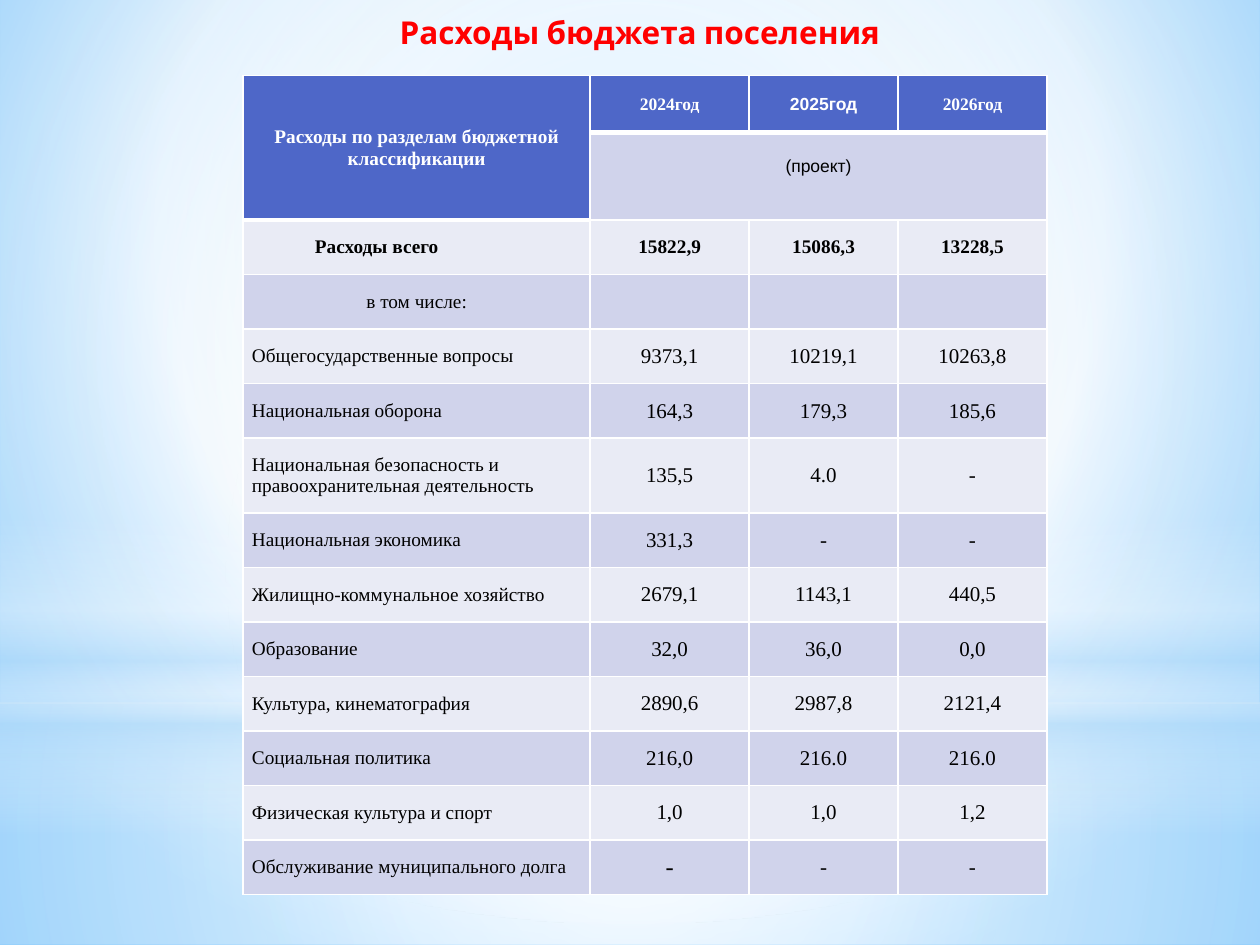
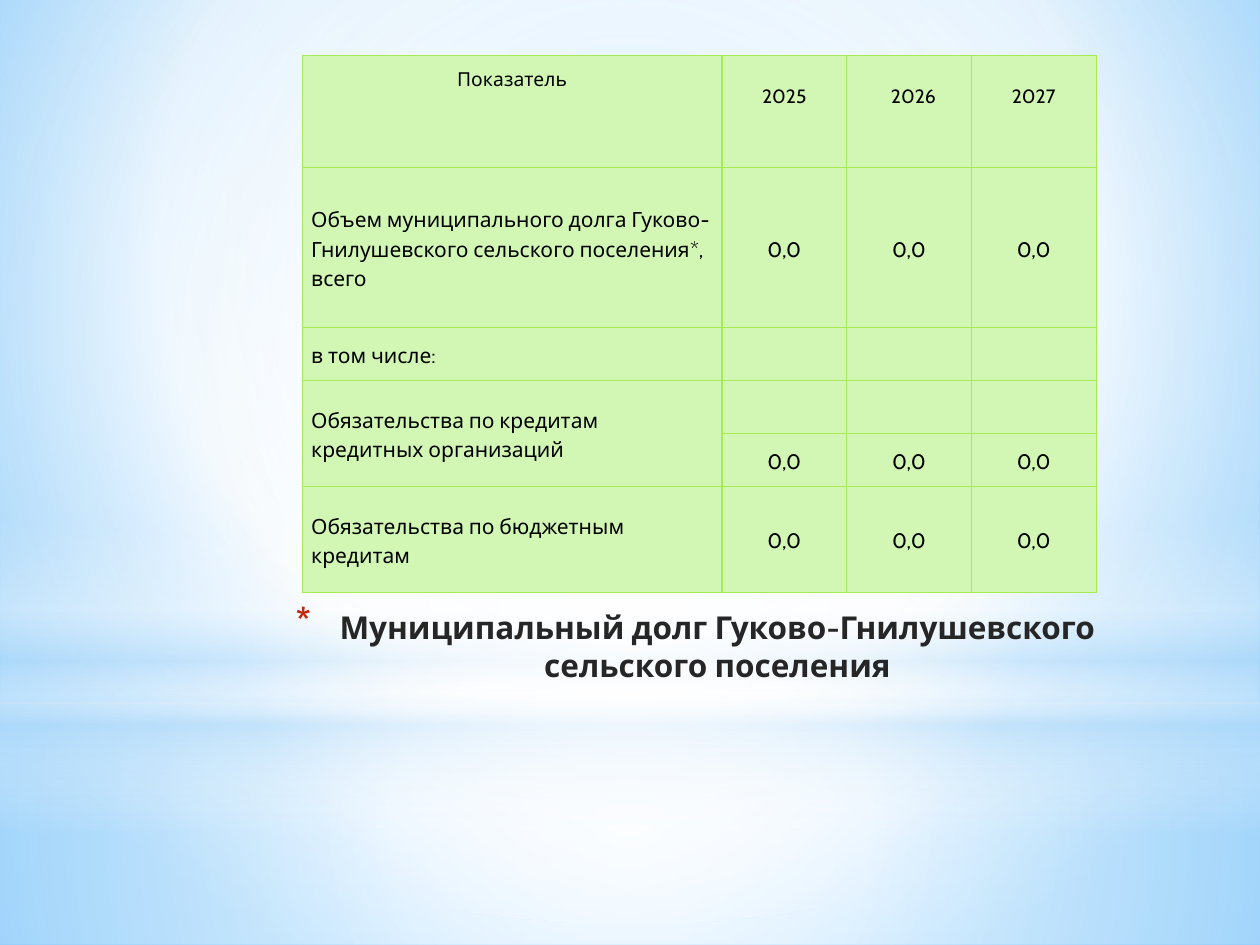
import pptx
import pptx.util
import pptx.dml.color
import pptx.enum.shapes
import pptx.enum.text
import pptx.oxml
import pptx.oxml.ns

Pt, Inches = pptx.util.Pt, pptx.util.Inches
RGB = pptx.dml.color.RGBColor
Align, Anchor = pptx.enum.text.PP_ALIGN, pptx.enum.text.MSO_ANCHOR
Kind = pptx.enum.shapes.MSO_SHAPE
qn = pptx.oxml.ns.qn

WHITE, BLACK = RGB(255, 255, 255), RGB(0, 0, 0)
RED, RUST, DARK = RGB(255, 0, 0), RGB(0xC3, 0x26, 0x0C), RGB(0x26, 0x26, 0x26)
BLUE, MID, PALE = RGB(0x4E, 0x67, 0xC8), RGB(0xD0, 0xD3, 0xEB), RGB(0xE9, 0xEB, 0xF5)
LIME, MINT = RGB(0xA7, 0xEA, 0x52), RGB(0xD2, 0xF7, 0xB5)
SKY, DEEP, MIST = RGB(0x9E, 0xD5, 0xFF), RGB(0x5B, 0xB9, 0xFF), RGB(0xB4, 0xDC, 0xFA)
SERIF, SANS, CABIN = "Times New Roman", "Arial", "Cabin"

WIDE, HIGH = Inches(10), Inches(7.5)
COL, ROW = WIDE / 100, HIGH / 100  # the slide is a grid of 100 by 100
SIDE = Inches(0.07)
MIDDLE = (50, 50, 50, 50)

COSTS = [
    ("Расходы всего", "15822,9", "15086,3", "13228,5"),
    ("в том числе:", "", "", ""),
    ("Общегосударственные вопросы", "9373,1", "10219,1", "10263,8"),
    ("Национальная оборона", "164,3", "179,3", "185,6"),
    ("Национальная безопасность и правоохранительная деятельность", "135,5", "4.0", "-"),
    ("Национальная экономика", "331,3", "-", "-"),
    ("Жилищно-коммунальное хозяйство", "2679,1", "1143,1", "440,5"),
    ("Образование", "32,0", "36,0", "0,0"),
    ("Культура, кинематография", "2890,6", "2987,8", "2121,4"),
    ("Социальная политика", "216,0", "216.0", "216.0"),
    ("Физическая культура и спорт", "1,0", "1,0", "1,2"),
    ("Обслуживание муниципального долга", "-", "-", "-"),
]
ZEROS, GAPS = ("0,0",) * 3, ("",) * 3
DEBTS = [
    ("Показатель", "2025", "2026", "2027"),
    ("Объем муниципального долга Гуково-Гнилушевского сельского поселения*, всего", *ZEROS),
    ("в том числе:", *GAPS),
    ("Обязательства по кредитам кредитных организаций", *GAPS),
    ("", *ZEROS),
    ("Обязательства по бюджетным кредитам", *ZEROS),
]


def place(box):
    left, top, width, height = box
    return int(left * COL), int(top * ROW), int(width * COL), int(height * ROW)


def node(tag, parent, **attrs):
    child = parent.makeelement(qn(tag), {k: str(v) for k, v in attrs.items()})
    parent.append(child)
    return child


def blend(owner, fill, stops, focus=None):
    """Fill with (place, colour, opacity) stops, round a focus or downwards."""
    fill.gradient()
    grad = owner.element.find(".//" + qn("a:gradFill"))
    for child in list(grad):
        grad.remove(child)
    group = node("a:gsLst", grad)
    for pos, color, alpha in stops:
        stop = node("a:gs", group, pos=pos * 1000)
        tint = node("a:srgbClr", stop, val=color)
        if alpha < 100:
            node("a:alpha", tint, val=alpha * 1000)
    if focus:
        way = node("a:path", grad, path="circle")
        node("a:fillToRect", way, **{k: v * 1000 for k, v in zip("ltrb", focus)})
    else:
        node("a:lin", grad, ang=90 * 60000, scaled=0)


def glow(slide, kind, box, stops, focus=MIDDLE):
    shape = slide.shapes.add_shape(kind, *place(box))
    shape.shadow.inherit = False
    shape.line.fill.background()
    blend(shape, shape.fill, stops, focus)


def scene(slide):
    """Draw the soft light behind every slide."""
    rect = Kind.RECTANGLE
    glow(slide, rect, (0, 74.4, 100, 25.6),
         [(0, WHITE, 91), (37, WHITE, 76), (100, MIST, 79)])
    glow(slide, rect, (0, 0, 100, 74.4),
         [(0, WHITE, 89), (48, WHITE, 62), (100, MIST, 79)])
    glow(slide, rect, (0, 54.9, 100, 33.3),
         [(0, WHITE, 0), (29, WHITE, 30), (45, MIST, 40),
          (55, WHITE, 26), (65, MIST, 60), (100, WHITE, 0)], None)
    glow(slide, Kind.OVAL, (0, 23.3, 100, 74.4), [(0, WHITE, 100), (56, WHITE, 0)])


def style(para, size, font, color, bold=False, align=Align.CENTER):
    para.alignment = align
    for face in [run.font for run in para.runs] or [para.font]:
        face.size, face.name, face.bold = Pt(size), font, bold
        face.color.rgb = color


def title(slide, box, text, color):
    frame = slide.shapes.add_textbox(*place(box)).text_frame
    frame.word_wrap = True
    para = frame.paragraphs[0]
    para.text = text
    style(para, 18, CABIN, color, True)
    return para


def star(para):
    """Give a paragraph the hanging asterisk."""
    props = para._p.get_or_add_pPr()
    props.set("marL", str(Inches(0.35)))
    props.set("indent", str(-Inches(0.35)))
    node("a:srgbClr", node("a:buClr", props), val=RUST)
    node("a:buSzPct", props, val=128000)
    node("a:buChar", props, char="*")


def indent(para, inches):
    para._p.get_or_add_pPr().set("indent", str(Inches(inches)))


def edge(cell, color, width, top=None, bottom=None):
    props = cell._tc.get_or_add_tcPr()
    sizes = {"L": width, "R": width, "T": top or width, "B": bottom or width}
    for i, (name, size) in enumerate(sizes.items()):
        line = node("a:ln" + name, props, w=Pt(size))
        node("a:srgbClr", node("a:solidFill", line), val=color)
        props.insert(i, line)


def grid(slide, box, cols, rows):
    """Add a plain table whose columns and rows share the box."""
    area = place(box)
    table = slide.shapes.add_table(len(rows), len(cols), *area).table
    table.first_row = table.horz_banding = False
    for col, part in zip(table.columns, cols):
        col.width = int(area[2] * part / sum(cols))
    for row, part in zip(table.rows, rows):
        row.height = int(area[3] * part / sum(rows))
    return table


def write(cell, text, fill):
    cell.fill.solid()
    cell.fill.fore_color.rgb = fill
    cell.margin_left = cell.margin_right = SIDE
    cell.margin_top = cell.margin_bottom = 0
    cell.vertical_anchor = Anchor.MIDDLE
    para = cell.text_frame.paragraphs[0]
    para.text = text
    return para


def costs(slide, box):
    heads = [("Расходы по разделам бюджетной классификации", "2024год", "2025год", "2026год"),
             ("", "(проект)", "", "")]
    rows = [45, 69] + [59 if len(line[0]) > 40 else 43 for line in COSTS]
    table = grid(slide, box, [275, 126, 118, 118], rows)
    for r, line in enumerate(heads + COSTS):
        for c, text in enumerate(line):
            cell = table.cell(r, c)
            head = r == 0 or (r == 1 and c == 0)
            fill = BLUE if head else MID if r % 2 else PALE
            para = write(cell, text, fill)
            size = 12 if r > 3 and c else 11 if r > 1 or c == 0 else 10
            font = SANS if text in ("2025год", "(проект)") else SERIF
            left = c == 0 and r > 1 and r != 3
            style(para, size, font, WHITE if head else BLACK, head or r == 2,
                  Align.LEFT if left else Align.CENTER)
            last = 1 if c == 0 else 0  # the last heading row of this column
            edge(cell, WHITE, 1, 3 if r == last + 1 else None, 3 if r <= last else None)
    table.cell(1, 1).margin_bottom = Inches(0.15)
    indent(table.cell(2, 0).text_frame.paragraphs[0], 0.5)
    table.cell(13, 1).text_frame.paragraphs[0].runs[0].font.size = Pt(14)
    table.cell(0, 0).merge(table.cell(1, 0))
    table.cell(1, 1).merge(table.cell(1, 3))


def debts(slide, box):
    table = grid(slide, box, [333, 99, 99, 99], [89, 127, 42, 42, 42, 84])
    for r, line in enumerate(DEBTS):
        for c, text in enumerate(line):
            cell = table.cell(r, c)
            para = write(cell, text, MINT)
            style(para, 12 if r else 11, CABIN, BLACK,
                  align=Align.LEFT if r and c == 0 else Align.CENTER)
            para.line_spacing = 1.15 if r or c else 1.5
            if r == 0:
                cell.vertical_anchor = Anchor.TOP
                cell.margin_top = Inches(0.2) if c else 0
            edge(cell, LIME, 0.75)
    for c, shift in ((0, -0.07), (2, 0.07)):
        indent(table.cell(0, c).text_frame.paragraphs[0], shift)
    table.cell(3, 0).merge(table.cell(4, 0))


def main():
    deck = pptx.Presentation()
    deck.slide_width, deck.slide_height = WIDE, HIGH
    master = deck.slide_master
    blend(master, master.background.fill,
          [(0, SKY, 100), (60, WHITE, 100), (100, DEEP, 100)], (20, 10, 20, 60))
    first, second = (deck.slides.add_slide(deck.slide_layouts[6]) for _ in range(2))
    for slide in (first, second):
        scene(slide)
    title(first, (3.3, 0.7, 95, 7.3), "Расходы бюджета поселения", RED)
    costs(first, (19.3, 8, 63.8, 86.7))
    star(title(second, (19.6, 63.7, 71.2, 16.7),
               "Муниципальный долг Гуково-Гнилушевского сельского поселения", DARK))
    debts(second, (24, 5.9, 63, 56.8))
    deck.save("out.pptx")


if __name__ == "__main__":
    main()
